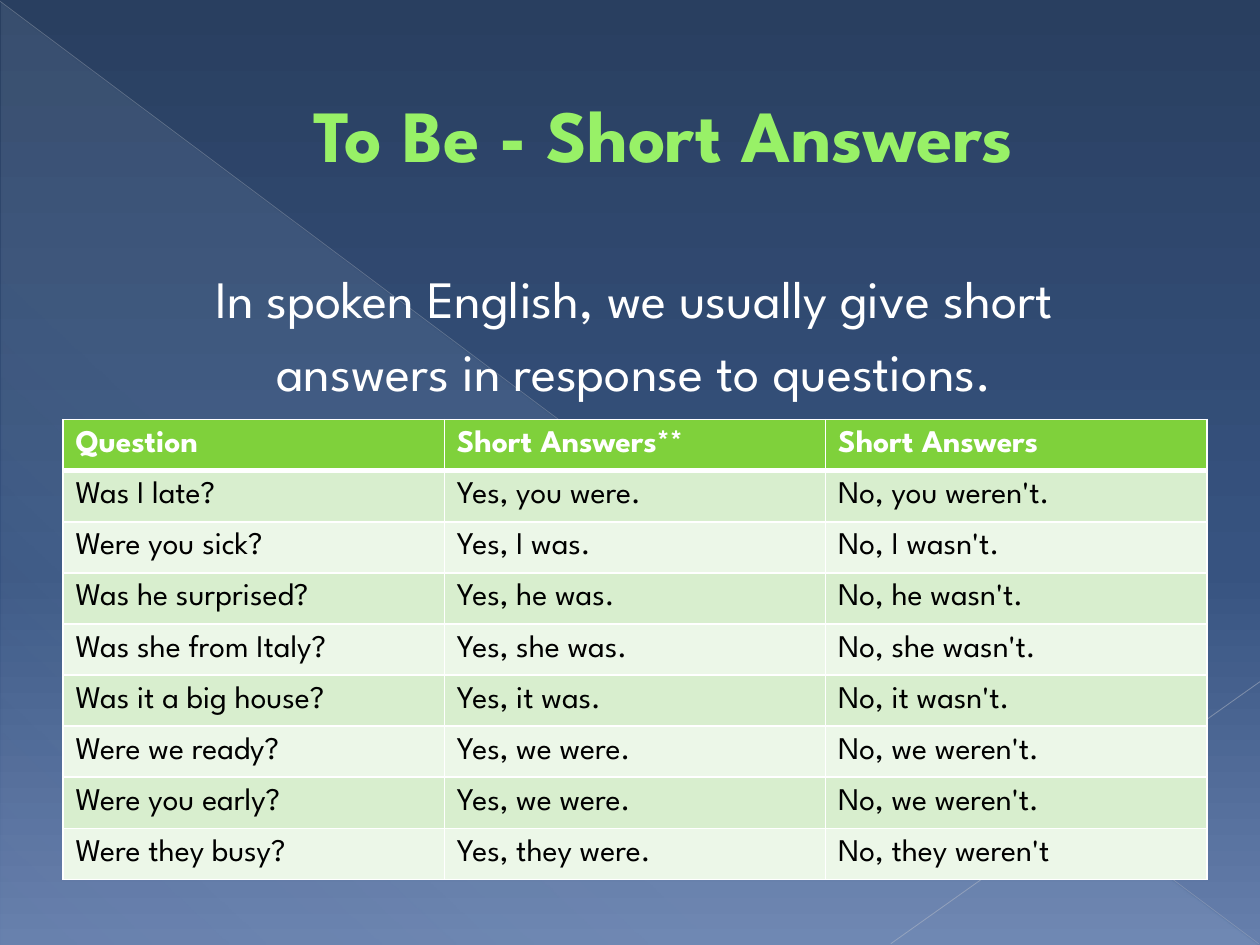
import pptx
import pptx.dml.color
import pptx.enum.shapes
import pptx.enum.text
import pptx.oxml
import pptx.oxml.ns
import pptx.util
from pptx.util import Inches

RGBColor = pptx.dml.color.RGBColor
qn = pptx.oxml.ns.qn

FONT = "League Spartan"
WHITE = RGBColor(0xFF, 0xFF, 0xFF)
BLACK = RGBColor(0x00, 0x00, 0x00)
TITLE_GREEN = RGBColor(0x98, 0xF1, 0x67)
OUTLINE_GREEN = RGBColor(0x58, 0x91, 0x29)
HEADER_GREEN = RGBColor(0x7F, 0xD1, 0x3B)
BAND_GREENS = (RGBColor(0xD8, 0xEE, 0xCE), RGBColor(0xEC, 0xF7, 0xE8))
NAVY = RGBColor(0x29, 0x3F, 0x60)
BLUE = RGBColor(0x37, 0x53, 0x80)
PALE_BLUE = RGBColor(0x66, 0x7F, 0xAC)
GLOW = RGBColor(0xD6, 0xEC, 0xFF)
DIAGONAL_GREY = RGBColor(0xB7, 0xBC, 0xC5)
CORNER_GREY = RGBColor(0xBF, 0xC3, 0xCB)

ROWS = [
    ("Question", "Short Answers**", "Short Answers"),
    ("Was I late?", "Yes, you were.", "No, you weren't."),
    ("Were you sick?", "Yes, I was.", "No, I wasn't."),
    ("Was he surprised?", "Yes, he was.", "No, he wasn't."),
    ("Was she from Italy?", "Yes, she was.", "No, she wasn't."),
    ("Was it a big house?", "Yes, it was.", "No, it wasn't."),
    ("Were we ready?", "Yes, we were.", "No, we weren't."),
    ("Were you early?", "Yes, we were.", "No, we weren't."),
    ("Were they busy?", "Yes, they were.", "No, they weren't"),
]


def add_element(parent, tag, **attributes):
    element = parent.makeelement(qn(tag), {})
    for name, value in attributes.items():
        element.set(name, str(value))
    parent.append(element)
    return element


def add_color(parent, color, alpha=100):
    element = add_element(parent, "a:srgbClr", val=color)
    if alpha < 100:
        add_element(element, "a:alpha", val=alpha * 1000)


def set_gradient(owner, fill, stops, angle):
    fill.gradient()
    gradient = next(owner.element.iter(qn("a:gradFill")))
    stop_list = gradient.find(qn("a:gsLst"))
    for stop in list(stop_list):
        stop_list.remove(stop)
    for position, color, alpha in stops:
        stop = add_element(stop_list, "a:gs", pos=position * 1000)
        add_color(stop, color, alpha)
    gradient.find(qn("a:lin")).set("ang", str(angle * 60000))


def write_text(frame, text, size, color, bold=False, align=None, margin=0,
               indent=0, before=None, outline=None):
    frame.word_wrap = True
    for index, line in enumerate(text.split("\n")):
        para = frame.add_paragraph() if index else frame.paragraphs[0]
        para.alignment = align
        para.space_before = before
        properties = para._p.get_or_add_pPr()
        properties.set("marL", str(Inches(margin)))
        properties.set("indent", str(Inches(indent)))
        span = para.add_run()
        span.text = line
        span.font.name = FONT
        span.font.size = pptx.util.Pt(size)
        span.font.bold = bold
        span.font.color.rgb = color
        if outline is not None:
            border = add_element(span._r.get_or_add_rPr(), "a:ln", w=pptx.util.Pt(0.5))
            add_color(add_element(border, "a:solidFill"), outline)
            span._r.rPr.insert(0, border)


def add_text_box(page, left, top, width, height, text, anchor, **text_format):
    box = page.shapes.add_textbox(*map(Inches, (left, top, width, height)))
    box.text_frame.vertical_anchor = anchor
    write_text(box.text_frame, text, **text_format)


def add_triangle(page):
    triangle = page.shapes.add_shape(
        pptx.enum.shapes.MSO_SHAPE.RIGHT_TRIANGLE,
        Inches(0.01), Inches(0.02), Inches(9.98), Inches(7.48))
    triangle.shadow.inherit = False
    triangle.line.fill.background()
    stops = [(0, GLOW, 10), (70, GLOW, 8), (100, GLOW, 1)]
    set_gradient(triangle, triangle.fill, stops, 133)


def add_line(page, start, end, color, width, alpha):
    line = page.shapes.add_connector(
        pptx.enum.shapes.MSO_CONNECTOR.STRAIGHT, *map(Inches, start + end))
    line.line.color.rgb = color
    line.line.width = pptx.util.Pt(width)
    add_element(next(line.element.iter(qn("a:srgbClr"))), "a:alpha", val=alpha * 1000)
    add_element(line.element.spPr, "a:effectLst")


def set_borders(cell, **widths):
    properties = cell._tc.get_or_add_tcPr()
    for index, side in enumerate("LRTB"):
        border = add_element(properties, "a:ln" + side,
                             w=pptx.util.Pt(widths.get(side, 1)))
        add_color(add_element(border, "a:solidFill"), WHITE)
        properties.insert(index, border)


def add_answer_table(page):
    table = page.shapes.add_table(
        len(ROWS), len(ROWS[0]),
        Inches(0.5), Inches(3.33), Inches(9.08), Inches(3.65)).table
    for row_index, row in enumerate(ROWS):
        is_header = row_index == 0
        for column_index, text in enumerate(row):
            cell = table.cell(row_index, column_index)
            cell.vertical_anchor = pptx.enum.text.MSO_ANCHOR.MIDDLE
            cell.fill.solid()
            cell.fill.fore_color.rgb = (
                HEADER_GREEN if is_header else BAND_GREENS[(row_index - 1) % 2])
            set_borders(cell, T=3 if row_index == 1 else 1, B=3 if is_header else 1)
            write_text(cell.text_frame, text, size=18, bold=is_header,
                       color=WHITE if is_header else BLACK)


def main():
    deck = pptx.Presentation()
    deck.slide_width, deck.slide_height = Inches(10), Inches(7.5)
    page = deck.slides.add_slide(deck.slide_layouts[6])
    stops = [(0, NAVY, 100), (60, BLUE, 100), (100, PALE_BLUE, 100)]
    set_gradient(page, page.background.fill, stops, 90)
    add_triangle(page)
    add_line(page, (0, 0.01), (9.99, 7.49), DIAGONAL_GREY, 0.39, 35)
    add_line(page, (10, 5.41), (7.07, 7.49), CORNER_GREY, 0.47, 45)
    center = pptx.enum.text.PP_ALIGN.CENTER
    add_text_box(page, 0.5, 0.29, 9, 1.53, "To Be - Short Answers",
                 pptx.enum.text.MSO_ANCHOR.MIDDLE, size=42, color=TITLE_GREEN,
                 bold=True, align=center, margin=0.53, outline=OUTLINE_GREEN)
    add_text_box(page, 0.5, 2.06, 9, 5,
                 "In spoken English, we usually give short\n"
                 "answers in response to questions.",
                 pptx.enum.text.MSO_ANCHOR.TOP, size=30, color=WHITE, align=center,
                 margin=0.49, indent=-0.42, before=pptx.util.Pt(6))
    add_answer_table(page)
    deck.save("out.pptx")


if __name__ == "__main__":
    main()
